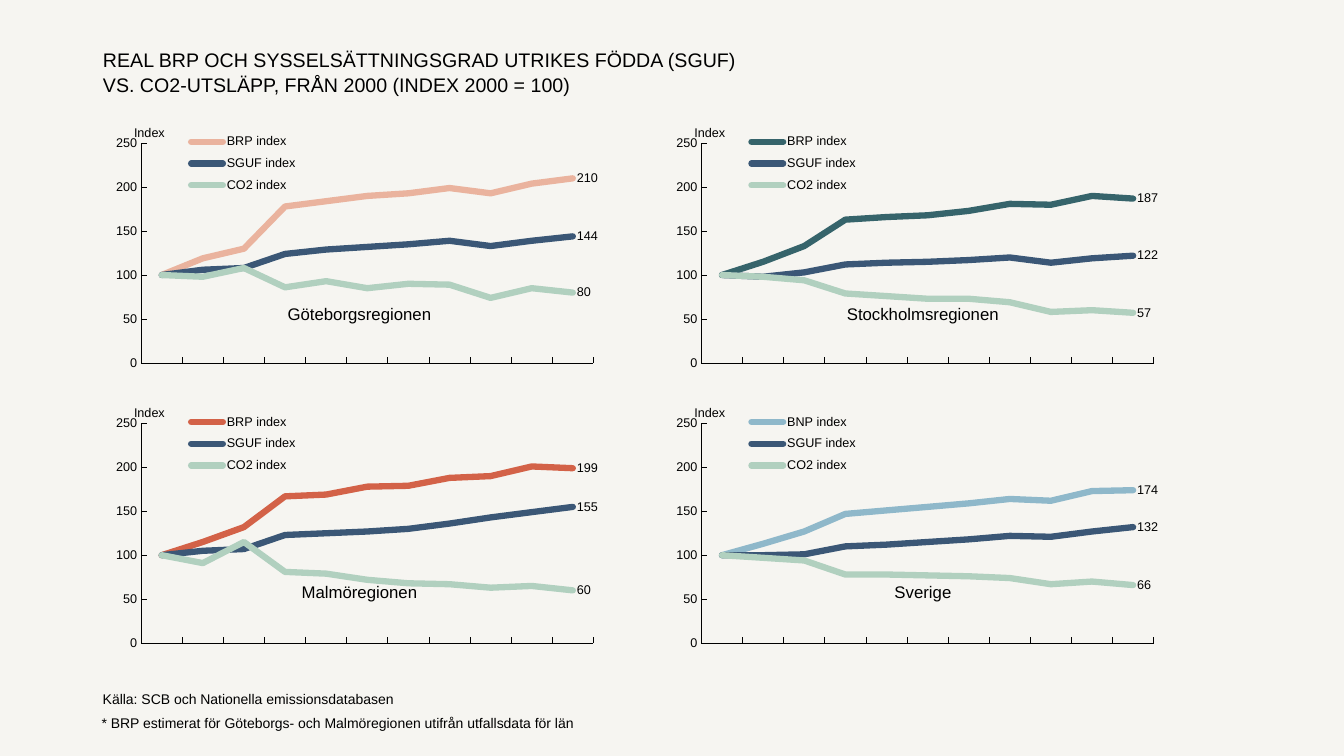
"""Build a slide with four regional line charts of output, employment and emissions."""
from lxml import etree
from pptx import Presentation
from pptx.chart.data import CategoryChartData
from pptx.dml.color import RGBColor
from pptx.enum import chart as kinds, text
from pptx.oxml import ns
from pptx.util import Cm, Pt

INK = RGBColor(0x00, 0x00, 0x00)
PAPER = RGBColor(0xF6, 0xF5, 0xF1)
NAVY = RGBColor(0x3B, 0x57, 0x76)
MINT = RGBColor(0xB1, 0xD0, 0xBF)
PEACH = RGBColor(0xEA, 0xB3, 0x9E)
TEAL = RGBColor(0x36, 0x64, 0x6B)
RUST = RGBColor(0xD3, 0x62, 0x48)
SKY = RGBColor(0x8F, 0xB8, 0xCA)
FONT = "Arial"

TITLE = ["REAL BRP OCH SYSSELSÄTTNINGSGRAD UTRIKES FÖDDA (SGUF)",
         "VS. CO2-UTSLÄPP, FRÅN 2000 (INDEX 2000 = 100)"]
SOURCE = "Källa: SCB och Nationella emissionsdatabasen"
FOOTNOTE = "* BRP estimerat för Göteborgs- och Malmöregionen utifrån utfallsdata för län"
YEARS = ["2000", "2005", "2010", "2015", "2016", "2017", "2018", "2019", "2020", "2021", "2022"]
REGIONS = [
    ("Göteborgsregionen", "BRP index", PEACH,
     [100, 119, 130, 178, 184, 190, 193, 199, 193, 204, 210],
     [100, 106, 108, 124, 129, 132, 135, 139, 133, 139, 144],
     [100, 98, 108, 86, 93, 85, 90, 89, 74, 85, 80]),
    ("Stockholmsregionen", "BRP index", TEAL,
     [100, 115, 133, 163, 166, 168, 173, 181, 180, 190, 187],
     [100, 98, 103, 112, 114, 115, 117, 120, 114, 119, 122],
     [100, 98, 94, 79, 76, 73, 73, 69, 58, 60, 57]),
    ("Malmöregionen", "BRP index", RUST,
     [100, 115, 132, 167, 169, 178, 179, 188, 190, 201, 199],
     [100, 105, 107, 123, 125, 127, 130, 136, 143, 149, 155],
     [100, 91, 115, 81, 79, 72, 68, 67, 63, 65, 60]),
    ("Sverige", "BNP index", SKY,
     [100, 113, 127, 147, 151, 155, 159, 164, 162, 173, 174],
     [100, 100, 101, 110, 112, 115, 118, 122, 121, 127, 132],
     [100, 97, 94, 78, 78, 77, 76, 74, 67, 70, 66]),
]
CHART_LEFTS, CHART_TOPS = (2.82, 16.94), (3.0, 10.06)
CAPTION_LEFTS, CAPTION_TOPS = (6.2, 20.4), (7.54, 14.53)


def style(font, size):
    """Apply the common typeface and ink colour."""
    font.name, font.size, font.bold = FONT, Pt(size), False
    font.color.rgb = INK


def write(box, lines, size, anchor, align=text.PP_ALIGN.LEFT):
    """Fill a box with one paragraph of one or more lines."""
    frame = box.text_frame
    frame.word_wrap = True
    frame.auto_size = text.MSO_AUTO_SIZE.NONE
    frame.vertical_anchor = anchor
    para = frame.paragraphs[0]
    para.alignment = align
    for number, line in enumerate(lines):
        if number:
            para.add_line_break()
        span = para.add_run()
        span.text = line
        style(span.font, size)
    return para


def add_text(page, line, size, anchor, bounds, align=text.PP_ALIGN.LEFT):
    """Add a text box with bounds in centimetres."""
    box = page.shapes.add_textbox(*map(Cm, bounds))
    write(box, [line], size, anchor, align)


def set_layout(parent, index, **measures):
    """Fix a chart part at fractions of the chart area."""
    for old in parent.findall(ns.qn("c:layout")):
        parent.remove(old)
    layout = etree.Element(ns.qn("c:layout"))
    manual = etree.SubElement(layout, ns.qn("c:manualLayout"))
    for name, value in measures.items():
        etree.SubElement(manual, ns.qn(f"c:{name}")).set("val", str(value))
    parent.insert(index, layout)


def format_axes(chart):
    """Format both axes and the heading of the value axis."""
    years, values = chart.category_axis, chart.value_axis
    for axis in (years, values):
        axis.has_major_gridlines = False
        axis.major_tick_mark = kinds.XL_TICK_MARK.INSIDE
        axis.minor_tick_mark = kinds.XL_TICK_MARK.NONE
        axis.format.line.color.rgb = INK
        axis.format.line.width = Pt(0.5)
        style(axis.tick_labels.font, 9)
    years.tick_label_position = kinds.XL_TICK_LABEL_POSITION.NONE
    values.minimum_scale, values.maximum_scale, values.major_unit = 0, 250, 50
    values.tick_labels.number_format = "0"
    values.tick_labels.number_format_is_linked = False
    heading = values.axis_title
    span = heading.text_frame.paragraphs[0].add_run()
    span.text = "Index"
    style(span.font, 9)
    element = heading._element
    body = next(element.iter(ns.qn("a:bodyPr")))
    body.set("rot", "0")
    body.set("vert", "horz")
    set_layout(element, 1, xMode="edge", yMode="edge", x=0.04, y=0.01)


def add_chart(page, left, top, output_name, colour, rows):
    """Add one region's line chart."""
    data = CategoryChartData(number_format="0")
    data.categories = YEARS
    for name, row in zip((output_name, "SGUF index", "CO2 index"), rows):
        data.add_series(name, row)
    chart = page.shapes.add_chart(kinds.XL_CHART_TYPE.LINE, Cm(left), Cm(top),
                                  Cm(12.5), Cm(7.01), data).chart
    chart.has_title = False
    style(chart.font, 9)
    format_axes(chart)
    for series, tint in zip(chart.plots[0].series, (colour, NAVY, MINT)):
        series.smooth = False
        series.marker.style = kinds.XL_MARKER_STYLE.NONE
        line = series.format.line
        line.color.rgb, line.width = tint, Pt(4.5)
        next(series._element.iter(ns.qn("a:ln"))).set("cap", "rnd")
        series.data_labels.show_value = False
        label = series.points[len(YEARS) - 1].data_label
        style(label.font, 9)
        label.position = kinds.XL_LABEL_POSITION.RIGHT
    chart.plots[0].vary_by_categories = False
    chart.has_legend = True
    legend = chart.legend
    legend.position = kinds.XL_LEGEND_POSITION.TOP
    legend.include_in_layout = True
    style(legend.font, 9)
    set_layout(legend._element, 1, xMode="edge", yMode="edge", x=0.13, y=0.03, w=0.27, h=0.26)
    area = chart._chartSpace.find(ns.qn("c:chart"))
    set_layout(area.find(ns.qn("c:plotArea")), 0, layoutTarget="inner",
               xMode="edge", yMode="edge", x=0.059, y=0.087, w=0.912, h=0.79)
    backdrop = etree.Element(ns.qn("c:spPr"))
    etree.SubElement(backdrop, ns.qn("a:noFill"))
    etree.SubElement(etree.SubElement(backdrop, ns.qn("a:ln")), ns.qn("a:noFill"))
    area.addnext(backdrop)


def main():
    """Assemble and save the slide."""
    deck = Presentation()
    deck.slide_width, deck.slide_height = Cm(33.87), Cm(19.05)
    page = deck.slides.add_slide(deck.slide_layouts[5])
    page.background.fill.solid()
    page.background.fill.fore_color.rgb = PAPER
    title = page.shapes.title
    title.left, title.top, title.width, title.height = map(Cm, (2.34, 1.04, 19.89, 1.3))
    write(title, TITLE, 14, text.MSO_ANCHOR.TOP).line_spacing = 1.07
    for index, (region, output_name, colour, *rows) in enumerate(REGIONS):
        row, column = divmod(index, 2)
        add_chart(page, CHART_LEFTS[column], CHART_TOPS[row], output_name, colour, rows)
        add_text(page, region, 12, text.MSO_ANCHOR.TOP,
                 (CAPTION_LEFTS[column], CAPTION_TOPS[row], 5.72, 0.76), text.PP_ALIGN.CENTER)
    add_text(page, SOURCE, 10, text.MSO_ANCHOR.BOTTOM, (2.34, 17.27, 10.41, 0.69))
    add_text(page, FOOTNOTE, 10, text.MSO_ANCHOR.MIDDLE, (2.31, 17.63, 14.94, 1.19))
    deck.save("out.pptx")


if __name__ == "__main__":
    main()
